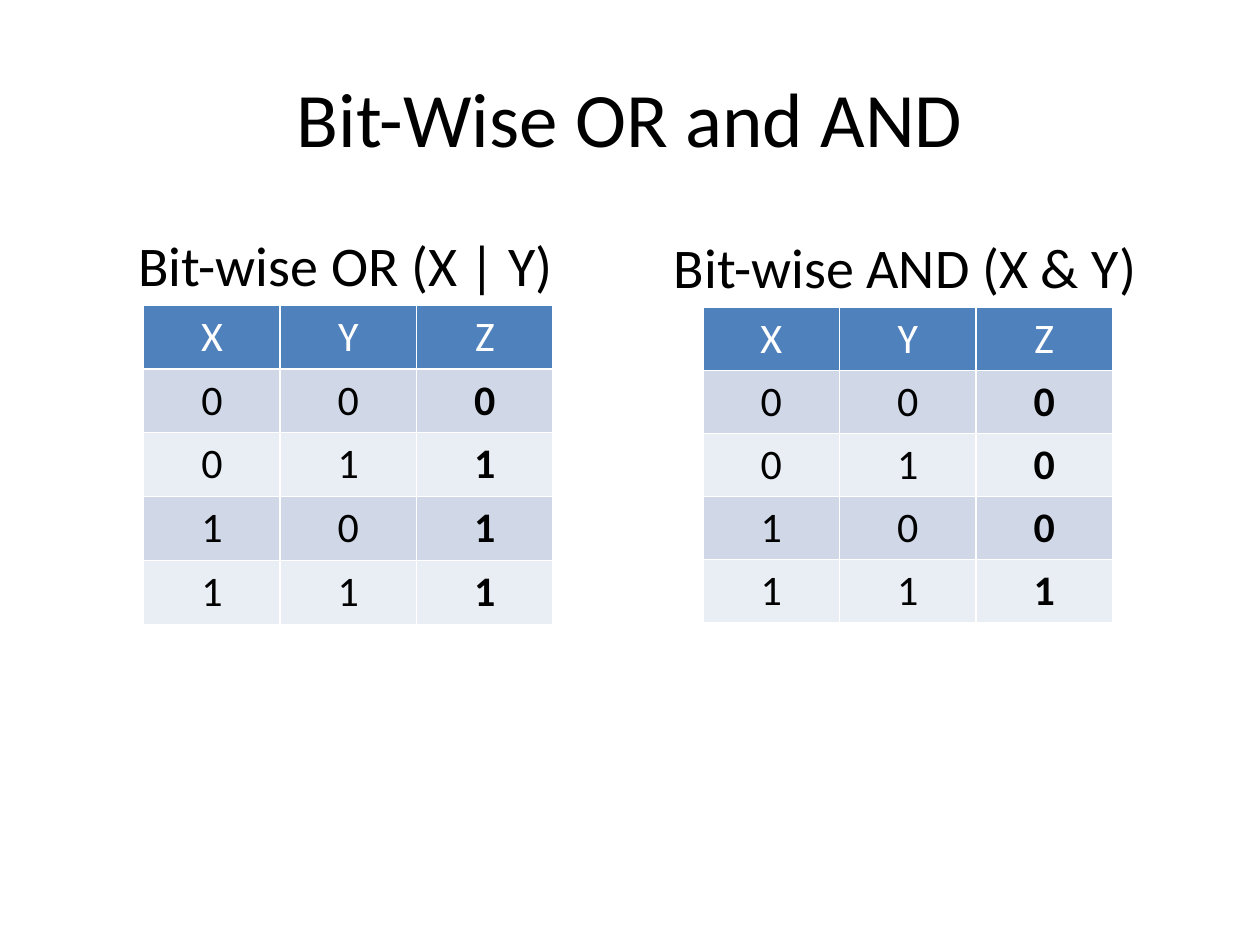
"""Build a slide with the truth tables of bit-wise OR and AND."""
from pptx import Presentation
from pptx.dml.color import RGBColor
from pptx.enum.text import MSO_ANCHOR, MSO_AUTO_SIZE, PP_ALIGN
from pptx.util import Inches, Pt

CENTER = PP_ALIGN.CENTER
LEFT = PP_ALIGN.LEFT
MIDDLE = MSO_ANCHOR.MIDDLE
GROW = MSO_AUTO_SIZE.SHAPE_TO_FIT_TEXT

COLORS = {
    "text": "000000",
    "header_text": "FFFFFF",
    "header": "4F81BD",
    "odd_row": "D0D8E8",
    "even_row": "E9EDF4",
}
HEADERS = ("X", "Y", "Z")
INPUTS = ((0, 0), (0, 1), (1, 0), (1, 1))
COLUMN_WIDTH = Inches(3.25 / 3)
ROW_HEIGHT = Inches(0.5)


def write(text_frame, text, size, color="text", alignment=CENTER, bold=False):
    """Put one formatted paragraph into a text frame."""
    text_frame.text = text
    paragraph = text_frame.paragraphs[0]
    paragraph.alignment = alignment
    paragraph.font.name = "Calibri"
    paragraph.font.size = Pt(size)
    paragraph.font.bold = bold
    paragraph.font.color.rgb = RGBColor.from_string(COLORS[color])


presentation = Presentation()
presentation.slide_width = Inches(10)
presentation.slide_height = Inches(7.5)
slide = presentation.slides.add_slide(presentation.slide_layouts[5])

title = slide.shapes.title
title.left, title.top = Inches(0.5), Inches(0.3)
title.width, title.height = Inches(9), Inches(1.25)
title.text_frame.vertical_anchor = MIDDLE
write(title.text_frame, "Bit-Wise OR and AND", 44)

operations = (
    ("Bit-wise OR (X | Y)", [x | y for x, y in INPUTS], 1, 1.78, 3.54, 1.14, 2.42),
    ("Bit-wise AND (X & Y)", [x & y for x, y in INPUTS], 5.25, 1.8, 3.92, 5.58, 2.44),
)
for caption, results, caption_left, caption_top, caption_width, table_left, table_top in operations:
    rows = [HEADERS] + [(x, y, z) for (x, y), z in zip(INPUTS, results)]
    table = slide.shapes.add_table(
        len(rows), len(HEADERS), Inches(table_left), Inches(table_top),
        COLUMN_WIDTH * len(HEADERS), ROW_HEIGHT * len(rows),
    ).table
    for row_index, values in enumerate(rows):
        is_header = row_index == 0
        fill = "header" if is_header else "odd_row" if row_index % 2 else "even_row"
        for column_index, value in enumerate(values):
            cell = table.cell(row_index, column_index)
            cell.fill.solid()
            cell.fill.fore_color.rgb = RGBColor.from_string(COLORS[fill])
            is_result = not is_header and column_index == len(HEADERS) - 1
            write(cell.text_frame, str(value), 24,
                  "header_text" if is_header else "text", bold=is_result)

    caption_box = slide.shapes.add_textbox(
        Inches(caption_left), Inches(caption_top), Inches(caption_width), Inches(0.64))
    caption_box.text_frame.word_wrap = False
    caption_box.text_frame.auto_size = GROW
    write(caption_box.text_frame, caption, 32, alignment=LEFT)

presentation.save("out.pptx")
